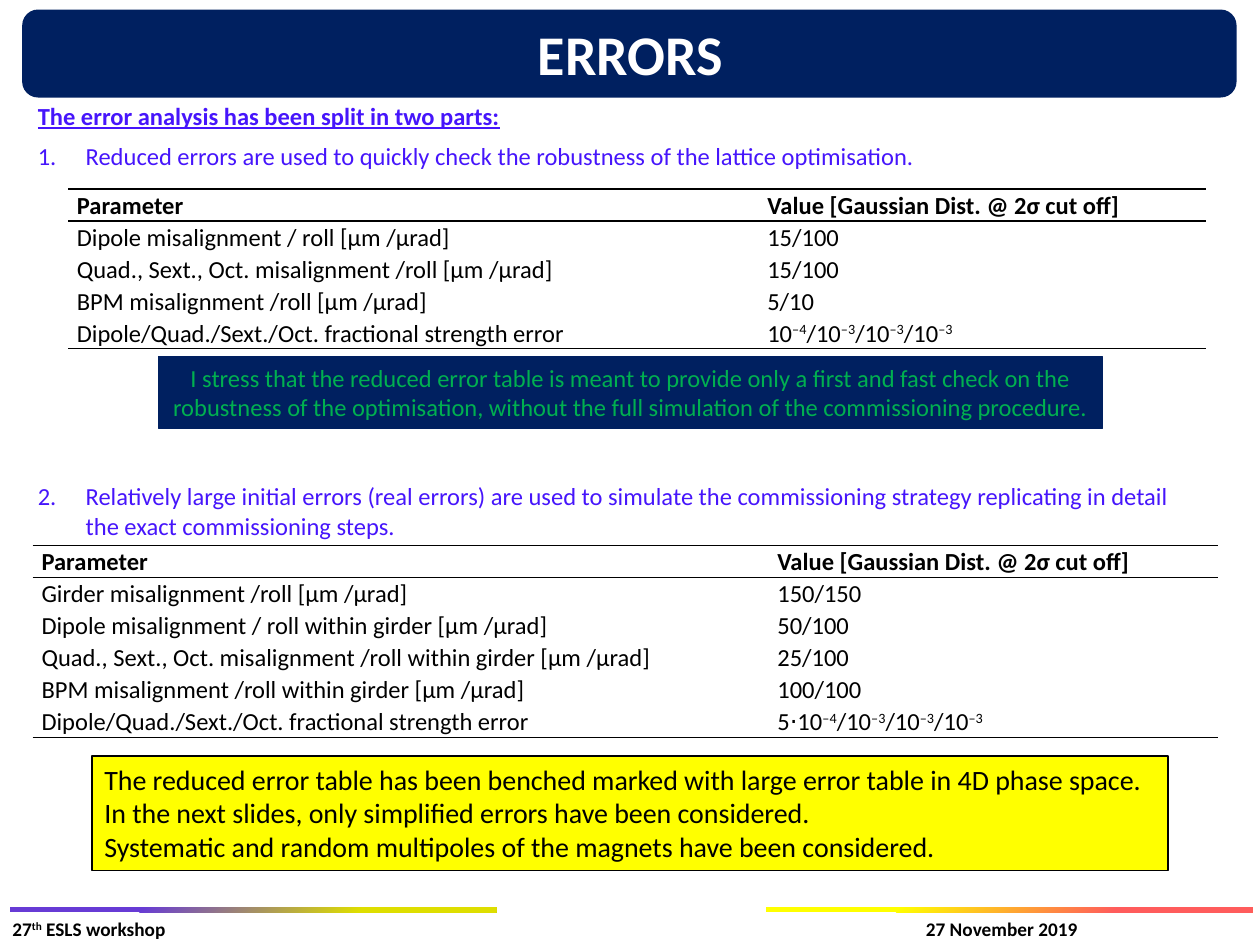
from lxml import etree
from pptx import Presentation
from pptx import util as u
from pptx.dml.color import RGBColor
from pptx.enum import shapes, text
from pptx.oxml import parse_xml
from pptx.oxml.ns import nsdecls, qn

COLORS = {
    "navy": "002060", "violet": "4615FB", "green": "00B050", "yellow": "FFFF00",
    "black": "000000", "white": "FFFFFF", "purple": "673BD5", "olive": "DEDE00",
    "coral": "FF5C5C",
}
COLS, ROWS = 100, 75  # grid over the slide
NO_STYLE = "{2D5ABB26-0587-4C30-8999-92F81FD0307C}"
ALIGN, ANCHOR = text.PP_ALIGN, text.MSO_ANCHOR


class Deck:
    font = "Calibri"

    def __init__(self):
        self.prs = Presentation()
        self.prs.slide_width, self.prs.slide_height = u.Inches(10), u.Inches(7.5)
        self.s = self.prs.slides.add_slide(self.prs.slide_layouts[3])

    def box(self, col, row, cols, rows):
        dx, dy = self.prs.slide_width / COLS, self.prs.slide_height / ROWS
        return [u.Emu(round(v)) for v in (col * dx, row * dy, cols * dx, rows * dy)]

    def color(self, name):
        return RGBColor.from_string(COLORS[name])

    def add_runs(self, p, content, size, color, bold=False, align=ALIGN.LEFT):
        """Fill a paragraph; parts between ^ marks are superscript."""
        p.alignment = align
        for i, part in enumerate(content.split("^")):
            if not part:
                continue
            r = p.add_run()
            r.text = part
            r.font.name, r.font.size, r.font.bold = self.font, u.Pt(size), bold
            r.font.color.rgb = self.color(color)
            if i % 2:
                r._r.get_or_add_rPr().set("baseline", "30000")

    def fill_frame(self, tf, lines, size, color, anchor=ANCHOR.TOP, **style):
        tf.word_wrap, tf.auto_size = True, text.MSO_AUTO_SIZE.NONE
        tf.vertical_anchor = anchor
        for i, line in enumerate(lines):
            p = tf.paragraphs[0] if i == 0 else tf.add_paragraph()
            self.add_runs(p, line, size, color, **style)

    def place(self, sp, at):
        sp.left, sp.top, sp.width, sp.height = self.box(*at)

    def shape(self, kind, at, fill=None, line=None, weight=0.75):
        sp = self.s.shapes.add_shape(kind, *self.box(*at))
        sp.shadow.inherit = False
        if fill:
            sp.fill.solid()
            sp.fill.fore_color.rgb = self.color(fill)
        if line:
            sp.line.color.rgb, sp.line.width = self.color(line), u.Pt(weight)
        else:
            sp.line.fill.background()
        return sp

    def title(self, content, at, banner_at):
        title = self.s.shapes.title
        self.place(title, at)
        self.fill_frame(title.text_frame, [content], 32, "white", ANCHOR.MIDDLE,
                        bold=True, align=ALIGN.CENTER)
        banner = self.shape(shapes.MSO_SHAPE.ROUNDED_RECTANGLE, banner_at, "navy", "navy", 2)
        title.element.addprevious(banner.element)

    def numbered(self, index, at, item, start=1, heading=None):
        body = self.s.placeholders[index]
        self.place(body, at)
        lines = [heading, item] if heading else [item]
        self.fill_frame(body.text_frame, lines, 14, "violet")
        for i, p in enumerate(body.text_frame.paragraphs):
            p.space_before = u.Pt(6 if i else 0)
            pPr = p._p.get_or_add_pPr()
            if heading and i == 0:
                pPr.set("marL", "0")
                pPr.set("indent", "0")
                etree.SubElement(pPr, qn("a:buNone"))
                for r in p.runs:
                    r.font.bold = r.font.underline = True
            else:
                hang = u.Inches(0.38)
                pPr.set("marL", str(hang))
                pPr.set("indent", str(-hang))
                etree.SubElement(pPr, qn("a:buFont")).set("typeface", "+mj-lt")
                number = etree.SubElement(pPr, qn("a:buAutoNum"))
                number.set("type", "arabicPeriod")
                number.set("startAt", str(start))

    def label(self, content, at, anchor):
        sp = self.s.shapes.add_textbox(*self.box(*at))
        self.fill_frame(sp.text_frame, [content], 11, "black", anchor, bold=True)

    def note(self, lines, at, size, color, fill, line, align=ALIGN.LEFT):
        sp = self.shape(shapes.MSO_SHAPE.RECTANGLE, at, fill, line)
        self.fill_frame(sp.text_frame, lines, size, color, align=align)

    def bar(self, at, near, far):
        sp = self.shape(shapes.MSO_SHAPE.RECTANGLE, at)
        stops = "".join(f'<a:gs pos="{pos}000"><a:srgbClr val="{COLORS[c]}"/></a:gs>'
                        for pos, c in ((28, near), (73, far)))
        sp.fill.gradient()
        grad = sp.element.spPr.find(qn("a:gradFill"))
        grad.getparent().replace(grad, parse_xml(
            f'<a:gradFill {nsdecls("a")} rotWithShape="1"><a:gsLst>{stops}</a:gsLst>'
            '<a:path path="circle"><a:fillToRect l="100000" t="100000"/></a:path></a:gradFill>'))

    def rule(self, cell, tag):
        ln = parse_xml(f'<a:{tag} {nsdecls("a")} w="{u.Pt(1)}"><a:solidFill>'
                       f'<a:srgbClr val="{COLORS["black"]}"/></a:solidFill></a:{tag}>')
        tcPr = cell._tc.get_or_add_tcPr()
        tcPr.insert(len(tcPr.findall(qn("a:lnT"))), ln)

    def table(self, col, row, widths, rows):
        height = 2.5
        at = self.box(col, row, sum(widths), height * len(rows))
        t = self.s.shapes.add_table(len(rows), len(widths), *at).table
        t.first_row = t.horz_banding = False
        t._tbl.tblPr.find(qn("a:tableStyleId")).text = NO_STYLE
        for column, width in zip(t.columns, widths):
            column.width = self.box(0, 0, width, 0)[2]
        for i, values in enumerate(rows):
            t.rows[i].height = self.box(0, 0, 0, height)[3]
            for j, value in enumerate(values):
                cell = t.cell(i, j)
                cell.fill.background()
                cell.margin_left = cell.margin_right = u.Inches(0.07)
                cell.margin_top = cell.margin_bottom = 0
                p = cell.text_frame.paragraphs[0]
                p.line_spacing = 1.07
                self.add_runs(p, value, 14, "black", i == 0, ALIGN.JUSTIFY)
                if i == 0:
                    self.rule(cell, "lnT")
                if i in (0, len(rows) - 1):
                    self.rule(cell, "lnB")


def main():
    d = Deck()
    header = ("Parameter", "Value [Gaussian Dist. @ 2σ cut off]")
    strength = "Dipole/Quad./Sext./Oct. fractional strength error"
    powers = "10^–4^" + "/10^–3^" * 3

    # Footer
    d.bar((0.8, 72, 38.6, 0.4), "olive", "purple")
    d.bar((60.8, 72, 38.6, 0.4), "coral", "yellow")
    d.label("27^th^ ESLS workshop", (0, 72.3, 36.7, 4), ANCHOR.TOP)
    d.label("27 November 2019", (72.5, 71.7, 18.3, 4), ANCHOR.MIDDLE)

    # Title
    d.title("ERRORS", (2.8, 0.8, 94.5, 6.9), (1.9, 0.9, 96.1, 6.7))

    # Part 1: reduced errors
    d.numbered(1, (2, 7.5, 73.1, 6.6),
               "Reduced errors are used to quickly check the robustness of the lattice optimisation.",
               heading="The error analysis has been split in two parts:")
    d.table(5.4, 15, (54.8, 35.5), [
        header,
        ("Dipole misalignment / roll [μm /μrad]", "15/100"),
        ("Quad., Sext., Oct. misalignment /roll [μm /μrad]", "15/100"),
        ("BPM misalignment /roll [μm /μrad]", "5/10"),
        (strength, powers),
    ])
    d.note(["I stress that the reduced error table is meant to provide only a first and fast check "
            "on the robustness of the optimisation, without the full simulation of the "
            "commissioning procedure."],
           (12.6, 28.3, 74.9, 5.7), 14, "green", "navy", "navy", ALIGN.CENTER)

    # Part 2: real errors
    d.numbered(2, (2, 37.7, 94.1, 5.7),
               "Relatively large initial errors (real errors) are used to simulate the commissioning "
               "strategy replicating in detail the exact commissioning steps.", start=2)
    d.table(2.6, 43.3, (58.4, 35.7), [
        header,
        ("Girder misalignment /roll [μm /μrad]", "150/150"),
        ("Dipole misalignment / roll within girder [μm /μrad]", "50/100"),
        ("Quad., Sext., Oct. misalignment /roll within girder [μm /μrad]", "25/100"),
        ("BPM misalignment /roll within girder [μm /μrad]", "100/100"),
        (strength, "5⋅" + powers),
    ])

    # Conclusion
    d.note(["The reduced error table has been benched marked with large error table in 4D phase space.",
            "In the next slides, only simplified errors have been considered.",
            "Systematic and random multipoles of the magnets have been considered."],
           (7.3, 60, 85.4, 9.1), 16, "black", "yellow", "black")

    d.prs.save("out.pptx")


if __name__ == "__main__":
    main()
